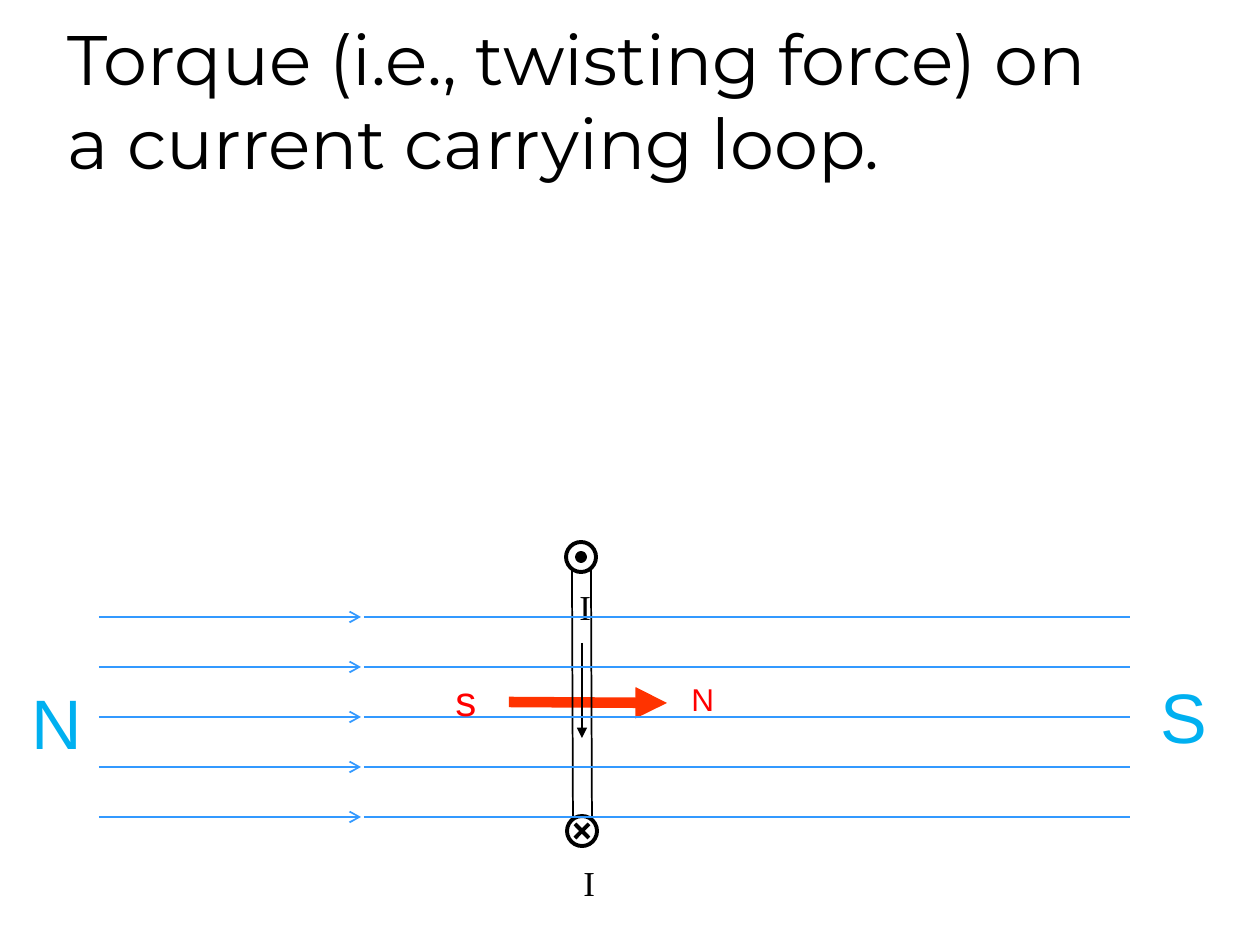
from dataclasses import dataclass

from lxml import etree
from pptx import Presentation
from pptx import util as u
from pptx.dml.color import RGBColor
from pptx.enum import shapes, text
from pptx.oxml.ns import qn


@dataclass(frozen=True)
class Theme:
    black: str = "000000"
    white: str = "FFFFFF"
    field: str = "3399FF"
    magnet: str = "00B0F0"
    moment: str = "FF3300"
    pole: str = "FF0000"
    title_font: str = "Montserrat"
    label_font: str = "Arial"
    current_font: str = "Times New Roman"
    big: int = 40
    medium: int = 24
    normal: int = 20
    small: int = 18
    thin: float = 1
    thick: float = 2.25
    heavy: float = 6


def px(n):
    """Convert px, at 126 to the inch, to EMU."""
    return u.Emu(round(n * 914400 / 126))


class Board:
    def __init__(self, s, theme):
        self.s = s
        self.theme = theme

    def add_text(self, p, words, size, font, color):
        r = p.add_run()
        r.text = words
        r.font.size = u.Pt(size)
        r.font.name = font
        r.font.color.rgb = RGBColor.from_string(color)

    def title(self, words, x, y, w, h):
        sp = self.s.shapes.title
        sp.left, sp.top, sp.width, sp.height = map(px, (x, y, w, h))
        tf = sp.text_frame
        tf.word_wrap = True
        tf.auto_size = text.MSO_AUTO_SIZE.NONE
        tf.vertical_anchor = text.MSO_ANCHOR.BOTTOM
        p = tf.paragraphs[0]
        p.alignment = text.PP_ALIGN.LEFT
        self.add_text(p, words, self.theme.big, self.theme.title_font, self.theme.black)

    def label(self, words, x, y, w, h, size, font, color):
        tf = self.s.shapes.add_textbox(*map(px, (x, y, w, h))).text_frame
        tf.word_wrap = True
        tf.auto_size = text.MSO_AUTO_SIZE.SHAPE_TO_FIT_TEXT
        self.add_text(tf.paragraphs[0], words, size, font, color)

    def circle(self, cx, cy, radius, fill):
        box = (cx - radius, cy - radius, 2 * radius, 2 * radius)
        sp = self.s.shapes.add_shape(shapes.MSO_SHAPE.OVAL, *map(px, box))
        sp.shadow.inherit = False
        sp.fill.solid()
        sp.fill.fore_color.rgb = RGBColor.from_string(fill)
        sp.line.color.rgb = RGBColor.from_string(self.theme.black)
        sp.line.width = u.Pt(self.theme.thick)

    def line(self, x1, y1, x2, y2, color, width, head=None):
        sp = self.s.shapes.add_connector(
            shapes.MSO_CONNECTOR.STRAIGHT, *map(px, (x1, y1, x2, y2)))
        sp.line.color.rgb = RGBColor.from_string(color)
        sp.line.width = u.Pt(width)
        if head:
            etree.SubElement(sp.get_or_add_ln(), qn("a:tailEnd"), type=head)
        etree.SubElement(sp.element.spPr, qn("a:effectLst"))


def draw_loop(board):
    t = board.theme
    x, top, bottom = 581, 557, 831
    board.line(509, 702, 667, 703, t.moment, t.heavy, "triangle")

    # Current out of the page above, into the page below
    board.circle(x, top, 15, t.white)
    board.circle(x, top, 4, t.black)
    board.circle(x + 1, bottom, 15, t.white)
    for rise in (-7, 7):
        board.line(x - 6, bottom - rise, x + 8, bottom + rise, t.black, t.thick)
    for left, y in ((567, 579), (571, 855)):
        board.label("I", left, y, 53, 54, t.normal, t.current_font, t.black)

    for side in (591, 572):
        board.line(side, 568, side + 1, 819, t.black, t.thin)
    board.line(582, 643, 582, 738, t.black, t.thin, "triangle")


def draw_field(board, first=617, gap=50, count=5):
    t = board.theme
    for y in range(first, first + gap * count, gap):
        board.line(99, y, 361, y, t.field, t.thin, "arrow")
        board.line(364, y, 1130, y, t.field, t.thin)


def main():
    prs = Presentation()
    prs.slide_width, prs.slide_height = px(1260), px(945)
    t = Theme()
    board = Board(prs.slides.add_slide(prs.slide_layouts[5]), t)

    board.title("Torque (i.e., twisting force) on a current carrying loop.",
                55, 32, 1071, 158)
    draw_loop(board)
    draw_field(board)
    for words, x, y, w, h, size, color in (
        ("N", 19, 673, 126, 97, t.big, t.magnet),
        ("S", 1148, 667, 89, 97, t.big, t.magnet),
        ("s", 443, 668, 126, 63, t.medium, t.pole),
        ("N", 679, 674, 48, 50, t.small, t.pole),
    ):
        board.label(words, x, y, w, h, size, t.label_font, color)
    prs.save("out.pptx")


if __name__ == "__main__":
    main()
